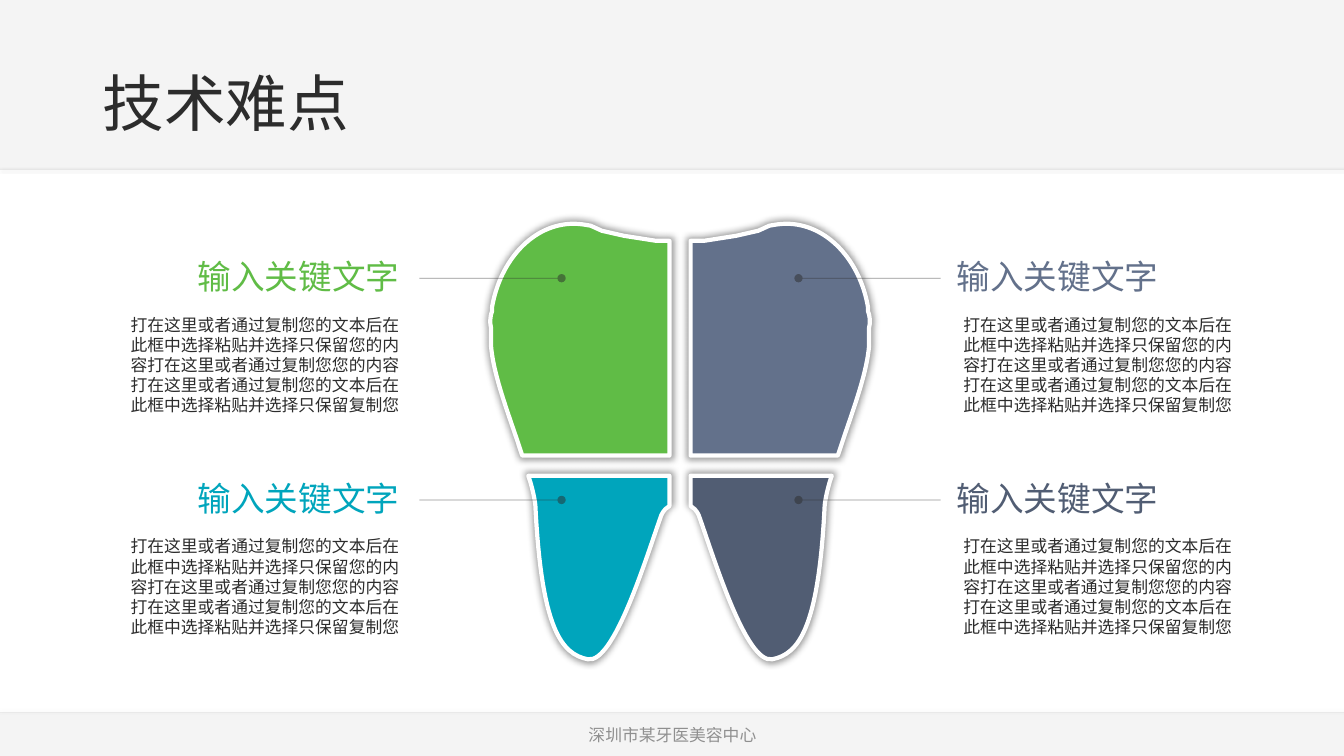
"""Build the slide on technical difficulties, with a four-part tooth diagram."""
from lxml import etree
from pptx import Presentation
from pptx.dml.color import RGBColor
from pptx.enum.shapes import MSO_CONNECTOR, MSO_SHAPE
from pptx.enum.text import MSO_ANCHOR, MSO_AUTO_SIZE, PP_ALIGN
from pptx.oxml.ns import qn
from pptx.util import Inches, Pt

STRAIGHT = MSO_CONNECTOR.STRAIGHT
RECTANGLE = MSO_SHAPE.RECTANGLE
TOP, MIDDLE, BOTTOM = MSO_ANCHOR.TOP, MSO_ANCHOR.MIDDLE, MSO_ANCHOR.BOTTOM
LEFT, CENTER, RIGHT = PP_ALIGN.LEFT, PP_ALIGN.CENTER, PP_ALIGN.RIGHT
GROW, FIXED = MSO_AUTO_SIZE.SHAPE_TO_FIT_TEXT, MSO_AUTO_SIZE.NONE

COLORS = {
    "ink": "2C2C2C", "white": "FFFFFF", "black": "000000", "green": "60BC46",
    "slate": "63718B", "teal": "00A5BC", "navy": "515D73",
}
WIDTH, HEIGHT = 13.33, 7.5
MIRROR = 13.49
HEADING = "输入关键文字"
BODY = (
    "打在这里或者通过复制您的文本后在此框中选择粘贴并选择只保留您的内容"
    "打在这里或者通过复制您您的内容打在这里或者通过复制您的文本后在"
    "此框中选择粘贴并选择只保留复制您"
)

deck = Presentation()
deck.slide_width, deck.slide_height = Inches(WIDTH), Inches(HEIGHT)
page = deck.slides.add_slide(deck.slide_layouts[6])


def write(text, *, at, size, color="ink", font="Calibri", align=LEFT, anchor=TOP,
          fit=FIXED, after=0, leading=1.0):
    """Add a text box with one formatted paragraph and return it."""
    box = page.shapes.add_textbox(*(Inches(value) for value in at))
    frame = box.text_frame
    frame.word_wrap = True
    frame.auto_size = fit
    frame.vertical_anchor = anchor
    para = frame.paragraphs[0]
    para.alignment = align
    para.space_after = Pt(after)
    para.line_spacing = leading
    span = para.add_run()
    span.text = text
    span.font.name = font
    span.font.size = Pt(size)
    span.font.color.rgb = RGBColor.from_string(COLORS[color])
    return box


def finish(item, opacity=100, shadow=None, spread=100):
    """Set the opacity of an item's colours and replace its theme shadow."""
    if opacity < 100:
        for tint in list(item.element.iter(qn("a:srgbClr"))):
            etree.SubElement(tint, qn("a:alpha"), val=str(opacity * 1000))
    effects = etree.SubElement(item.element.spPr, qn("a:effectLst"))
    if shadow:
        strength, blur, distance, angle = shadow
        outer = etree.SubElement(
            effects, qn("a:outerShdw"), blurRad=str(Pt(blur)), dist=str(Pt(distance)),
            dir=str(angle * 60000), sx=str(spread * 1000), sy=str(spread * 1000),
            algn="ctr", rotWithShape="0")
        tint = etree.SubElement(outer, qn("a:srgbClr"), val=COLORS["black"])
        etree.SubElement(tint, qn("a:alpha"), val=str(strength * 1000))


for top, height, edge, shadow in [
    (0, 1.68, 1.68, (100, 2, 1, 90)),
    (7.07, 0.43, 7.07, (40, 2, 1, 270)),
]:
    band = page.shapes.add_shape(
        RECTANGLE, Inches(0), Inches(top), Inches(WIDTH), Inches(height))
    band.fill.solid()
    band.fill.fore_color.rgb = RGBColor.from_string(COLORS["ink"])
    band.line.fill.background()
    finish(band, opacity=5)
    rule = page.shapes.add_connector(
        STRAIGHT, Inches(0), Inches(edge), Inches(WIDTH), Inches(edge))
    rule.line.width = Pt(0.5)
    rule.line.color.rgb = RGBColor.from_string(COLORS["ink"])
    finish(rule, opacity=10, shadow=shadow)

write("技术难点", at=(0.92, 0.41, 11.49, 1.03), size=44, anchor=BOTTOM, leading=0.9)
footer = write("深圳市某牙医美容中心", at=(4.42, 7.09, 4.5, 0.4), size=12,
               align=CENTER, anchor=MIDDLE)
finish(footer, opacity=50)

CROWN = [
    (5.69, 2.22), (5.75, 2.22, 5.81, 2.23, 5.86, 2.24), (5.97, 2.29), (6.19, 2.34),
    (6.51, 2.39), (6.64, 2.39), (6.64, 4.52), (5.18, 4.52), (5.12, 4.34),
    (5, 3.99, 4.89, 3.68, 4.87, 3.43), (4.87, 3.41, 4.87, 3.38, 4.87, 3.35),
    (4.87, 3.25), (4.86, 3.21, 4.86, 3.17, 4.87, 3.12), (4.88, 3.09), (4.88, 3.05),
    (4.96, 2.58, 5.29, 2.22, 5.69, 2.22),
]
ROOT = [
    (5.24, 4.72), (6.64, 4.72), (6.64, 5.02), (6.6, 5.05),
    (6.58, 5.07, 6.57, 5.09, 6.56, 5.11), (6.41, 5.53, 6.09, 6.59, 5.83, 6.54),
    (5.57, 6.49, 5.37, 6.24, 5.31, 5.01), (5.3, 4.93, 5.28, 4.85, 5.26, 4.78),
]
QUARTERS = [
    (CROWN, False, "green", 2.49), (CROWN, True, "slate", 2.49),
    (ROOT, False, "teal", 4.69), (ROOT, True, "navy", 4.69),
]

for outline, mirrored, color, top in QUARTERS:
    steps = [
        [(Inches(MIRROR - x if mirrored else x), Inches(y))
         for x, y in zip(step[::2], step[1::2])]
        for step in outline
    ]
    builder = page.shapes.build_freeform(*steps[0][0])
    builder.add_line_segments([step[-1] for step in steps[1:]], close=False)
    quarter = builder.convert_to_shape()
    track = next(quarter.element.iter(qn("a:path")))
    for segment, step in zip(track.findall(qn("a:lnTo")), steps[1:]):
        if len(step) == 3:
            curve = etree.Element(qn("a:cubicBezTo"))
            for x, y in step:
                etree.SubElement(curve, qn("a:pt"), x=str(x - quarter.left), y=str(y - quarter.top))
            track.replace(segment, curve)
    etree.SubElement(track, qn("a:close"))
    quarter.fill.solid()
    quarter.fill.fore_color.rgb = RGBColor.from_string(COLORS[color])
    quarter.line.color.rgb = RGBColor.from_string(COLORS["white"])
    quarter.line.width = Pt(3)
    finish(quarter, shadow=(40, 5, 0, 0), spread=102)

for outline, mirrored, color, top in QUARTERS:
    left = 9.39 if mirrored else 1.13
    write(BODY, at=(left, top + 0.58, 2.93, 1.11), size=12, font="Noto Sans CJK SC",
          align=RIGHT, fit=GROW, after=10)
    write(HEADING, at=(left, top, 2.93, 0.5), size=24, color=color,
          align=LEFT if mirrored else RIGHT, anchor=BOTTOM, fit=GROW, after=10)
    start, end = (7.92, 9.33) if mirrored else (4.16, 5.57)
    level = Inches(top + 0.27)
    leader = page.shapes.add_connector(STRAIGHT, Inches(start), level, Inches(end), level)
    leader.line.width = Pt(0.5)
    leader.line.color.rgb = RGBColor.from_string(COLORS["ink"])
    dot = "a:headEnd" if mirrored else "a:tailEnd"
    stroke = leader.element.spPr.find(qn("a:ln"))
    etree.SubElement(stroke, qn(dot), type="oval", w="med", len="med")
    finish(leader, opacity=50)

deck.save("out.pptx")
